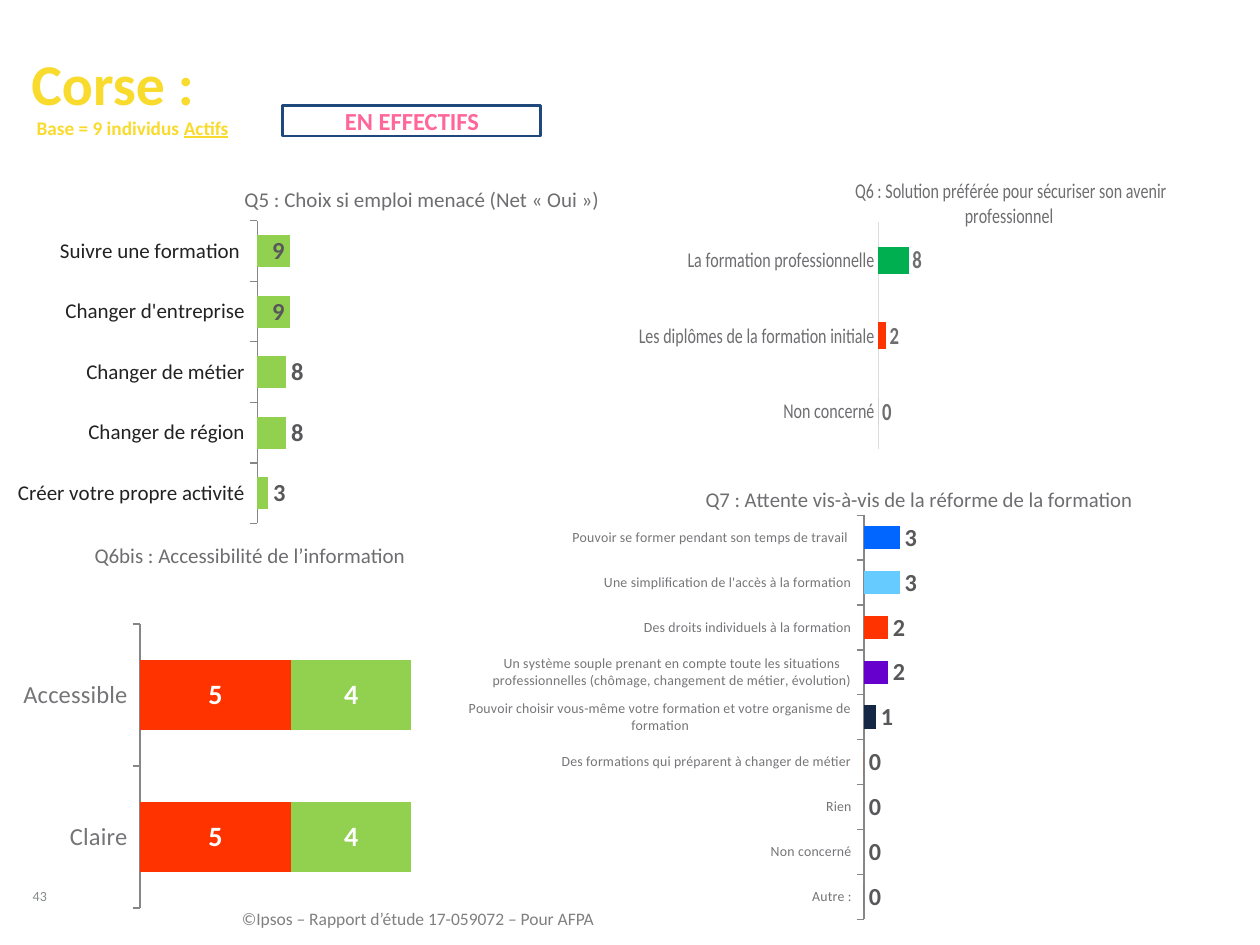
import pptx
import pptx.util
import pptx.chart.data
import pptx.dml.color
import pptx.enum.chart
import pptx.enum.shapes
import pptx.enum.text
import pptx.oxml
import pptx.oxml.ns

Pt = pptx.util.Pt
RGB = pptx.dml.color.RGBColor
ChartType = pptx.enum.chart.XL_CHART_TYPE
LabelPosition = pptx.enum.chart.XL_LABEL_POSITION
Tick = pptx.enum.chart.XL_TICK_MARK
Align = pptx.enum.text.PP_ALIGN
Anchor = pptx.enum.text.MSO_ANCHOR

FONT = "Calibri"
YELLOW = RGB(0xF8, 0xDB, 0x2C)
PINK = RGB(0xFF, 0x66, 0x99)
NAVY = RGB(0x1F, 0x49, 0x7D)
WHITE = RGB(0xFF, 0xFF, 0xFF)
INK = RGB(0x22, 0x22, 0x23)
DARK = RGB(0x38, 0x38, 0x39)
SLATE = RGB(0x58, 0x58, 0x5B)
TITLE_GREY = RGB(0x6E, 0x6E, 0x71)
AXIS_GREY = RGB(0x75, 0x75, 0x78)
LINE_GREY = RGB(0x86, 0x86, 0x86)
PALE_GREY = RGB(0xDD, 0xDD, 0xDE)
PAGE_GREY = RGB(0x88, 0x8B, 0x8D)
FOOTER_GREY = RGB(0x80, 0x80, 0x80)
MID_GREY = RGB(0x8F, 0x8F, 0x92)
BAR_GREY = RGB(0xA6, 0xA6, 0xA6)
RED = RGB(0xFF, 0x33, 0x00)
GREEN = RGB(0x00, 0xB0, 0x50)
LIME = RGB(0x92, 0xD0, 0x50)
GOLD = RGB(0xF1, 0xBE, 0x48)
MIDNIGHT = RGB(0x14, 0x28, 0x46)
PURPLE = RGB(0x66, 0x00, 0xCC)
SKY = RGB(0x66, 0xCC, 0xFF)
BLUE = RGB(0x00, 0x66, 0xFF)

QUESTIONS = [
    dict(title="Q6 : Solution préférée pour sécuriser son avenir professionnel ",
         box=(365, 87, 340, 193.7), plot=(0.218, 0.207, 0.748, 0.67), title_at=(0.16, 0.06),
         answers=["Non concerné", "Les diplômes de la formation initiale",
                  "La formation professionnelle"],
         series=[([0, 2, 8], GOLD)], points={0: MID_GREY, 1: RED, 2: GREEN},
         top=90, gap=182, axis=(12, TITLE_GREY, PALE_GREY, Tick.NONE), label=(14, TITLE_GREY)),
    dict(title="Q6bis : Accessibilité de l’information",
         box=(0, 302.4, 241.2, 223.2), plot=(0.332, 0.243, 0.643, 0.727), title_at=(0.215, 0.02),
         answers=["Claire", "Accessible"],
         series=[([0, 0], DARK), ([5, 5], RED), ([4, 4], LIME)], stacked=True,
         top=1, gap=102, axis=(14, AXIS_GREY, LINE_GREY, Tick.OUTSIDE), label=(16, WHITE)),
    dict(title="Q7 : Attente vis-à-vis de la réforme de la formation",
         box=(267.8, 270, 450, 262.8), plot=(0.495, 0.093, 0.462, 0.879), title_at=(0.286, 0.02),
         answers=["Autre :", "Non concerné", "Rien",
                  "Des formations qui préparent à changer de métier",
                  "Pouvoir choisir vous-même votre formation et votre organisme de formation",
                  "Un système souple prenant en compte toute les situations professionnelles "
                  "(chômage, changement de métier, évolution)",
                  "Des droits individuels à la formation",
                  "Une simplification de l'accès à la formation",
                  "Pouvoir se former pendant son temps de travail "],
         series=[([0, 0, 0, 0, 1, 2, 2, 3, 3], BAR_GREY)],
         points={0: SLATE, 2: MID_GREY, 3: RED, 4: MIDNIGHT, 5: PURPLE, 6: RED, 7: SKY, 8: BLUE},
         top=30, gap=90, axis=(8, AXIS_GREY, LINE_GREY, Tick.OUTSIDE), label=(14, SLATE)),
    dict(title="Q5 : Choix si emploi menacé (Net « Oui »)",
         box=(0, 97.2, 365.8, 210.2), plot=(0.402, 0.138, 0.563, 0.823), title_at=(0.376, 0.03),
         answers=["Créer votre propre activité", "Changer de région", "Changer de métier",
                  "Changer d'entreprise", "Suivre une formation "],
         series=[([3, 8, 8, 9, 9], LIME)], inside=[3, 4],
         top=100, gap=90, axis=(12, INK, LINE_GREY, Tick.OUTSIDE), label=(14, SLATE)),
]

HEADING = dict(box=(18, 31.7, 681, 36), runs=["Corse :"], size=33, color=YELLOW,
               bold=True, spacing=0.9)
BASE = dict(box=(20.2, 66.2, 175.7, 26.6), runs=["Base = 9 individus ", "Actifs"], size=11,
            color=YELLOW, bold=True, underlined="Actifs", indent=0.7)
PAGE = dict(box=(18.7, 491.8, 24.5, 25.2), runs=["43"], size=8, color=PAGE_GREY,
            spacing=0.85, anchor=Anchor.BOTTOM, wrap=False)
FOOTER = dict(box=(138.2, 519.1, 370, 46.8),
              runs=["©Ipsos – Rapport d’étude 17-059072 – Pour AFPA"], size=10, color=FOOTER_GREY)
UNIT = dict(box=(161.3, 60.5, 147.6, 17.3), runs=["EN EFFECTIFS"], size=14, color=PINK,
            bold=True, align=Align.CENTER, indent=0.7)


def style(font, size, color, bold=False):
    font.name, font.size, font.bold = FONT, Pt(size), bold
    font.color.rgb = color


def write(shape, content):
    frame = shape.text_frame
    frame.word_wrap = content.get("wrap", True)
    frame.vertical_anchor = content.get("anchor", Anchor.TOP)
    frame.margin_left = frame.margin_right = frame.margin_top = frame.margin_bottom = 0
    paragraph = frame.paragraphs[0]
    paragraph.alignment = content.get("align", Align.LEFT)
    paragraph.line_spacing = content.get("spacing", 1.0)
    if "indent" in content:
        paragraph._p.get_or_add_pPr().set("marL", str(Pt(content["indent"])))
    for words in content["runs"]:
        run = paragraph.add_run()
        run.text = words
        style(run.font, content["size"], content["color"], content.get("bold", False))
        if words == content.get("underlined"):
            run.font.underline = True


def place(element, values, inner=False):
    fields = list(zip("xywh", values))
    target = '<c:layoutTarget val="inner"/>' if inner else ""
    modes = "".join(f'<c:{name}Mode val="edge"/>' for name, _ in fields if name in "xy")
    sizes = "".join(f'<c:{name} val="{value}"/>' for name, value in fields)
    layout = pptx.oxml.parse_xml(
        f'<c:layout {pptx.oxml.ns.nsdecls("c")}><c:manualLayout>{target}{modes}{sizes}'
        '</c:manualLayout></c:layout>')
    for old in element.findall(pptx.oxml.ns.qn("c:layout")):
        element.remove(old)
    text = element.find(pptx.oxml.ns.qn("c:tx"))
    if text is None:
        element.insert(0, layout)
    else:
        text.addnext(layout)


def add_question(slide, question):
    stacked = question.get("stacked", False)
    data = pptx.chart.data.CategoryChartData()
    data.categories = question["answers"]
    for number, (values, _) in enumerate(question["series"], 1):
        data.add_series(f"Series {number}", values)
    kind = ChartType.BAR_STACKED_100 if stacked else ChartType.BAR_CLUSTERED
    chart = slide.shapes.add_chart(kind, *map(Pt, question["box"]), data).chart
    style(chart.font, 18, INK)
    chart.has_legend = False

    chart.has_title = True
    heading = chart.chart_title.text_frame.paragraphs[0].add_run()
    heading.text = question["title"]
    style(heading.font, 12, TITLE_GREY)
    chart.chart_title.include_in_layout = False
    place(chart.chart_title._element, question["title_at"])
    place(chart._chartSpace.chart.plotArea, question["plot"], inner=True)

    size, color, line, tick = question["axis"]
    answers = chart.category_axis
    style(answers.tick_labels.font, size, color)
    answers.major_tick_mark = tick
    answers.format.line.color.rgb = line
    answers.format.line.width = Pt(0.75)
    scale = chart.value_axis
    scale.has_major_gridlines = False
    scale.minimum_scale, scale.maximum_scale = 0, question["top"]
    scale.visible = False

    bars = chart.plots[0]
    bars.vary_by_categories = False
    bars.gap_width = question["gap"]
    if stacked:
        bars.overlap = 100
    for series, (values, fill) in zip(bars.series, question["series"]):
        series.format.fill.solid()
        series.format.fill.fore_color.rgb = fill
        if stacked and not any(values):
            continue
        labels = series.data_labels
        labels.show_value = True
        labels.position = LabelPosition.CENTER if stacked else LabelPosition.OUTSIDE_END
        style(labels.font, *question["label"], True)
        for index, point_color in question.get("points", {}).items():
            point = series.points[index].format.fill
            point.solid()
            point.fore_color.rgb = point_color
        for index in question.get("inside", []):
            label = series.points[index].data_label
            style(label.font, *question["label"], True)
            label.position = LabelPosition.INSIDE_END


def main():
    deck = pptx.Presentation()
    deck.slide_width, deck.slide_height = Pt(720), Pt(540)
    slide = deck.slides.add_slide(deck.slide_layouts[6])
    for content in (PAGE, HEADING, BASE):
        write(slide.shapes.add_textbox(*map(Pt, content["box"])), content)
    for question in QUESTIONS:
        add_question(slide, question)
    write(slide.shapes.add_textbox(*map(Pt, FOOTER["box"])), FOOTER)
    unit = slide.shapes.add_shape(pptx.enum.shapes.MSO_SHAPE.RECTANGLE, *map(Pt, UNIT["box"]))
    unit.shadow.inherit = False
    unit.fill.background()
    unit.line.color.rgb = NAVY
    unit.line.width = Pt(1.5)
    write(unit, UNIT)
    deck.save("out.pptx")


if __name__ == "__main__":
    main()
